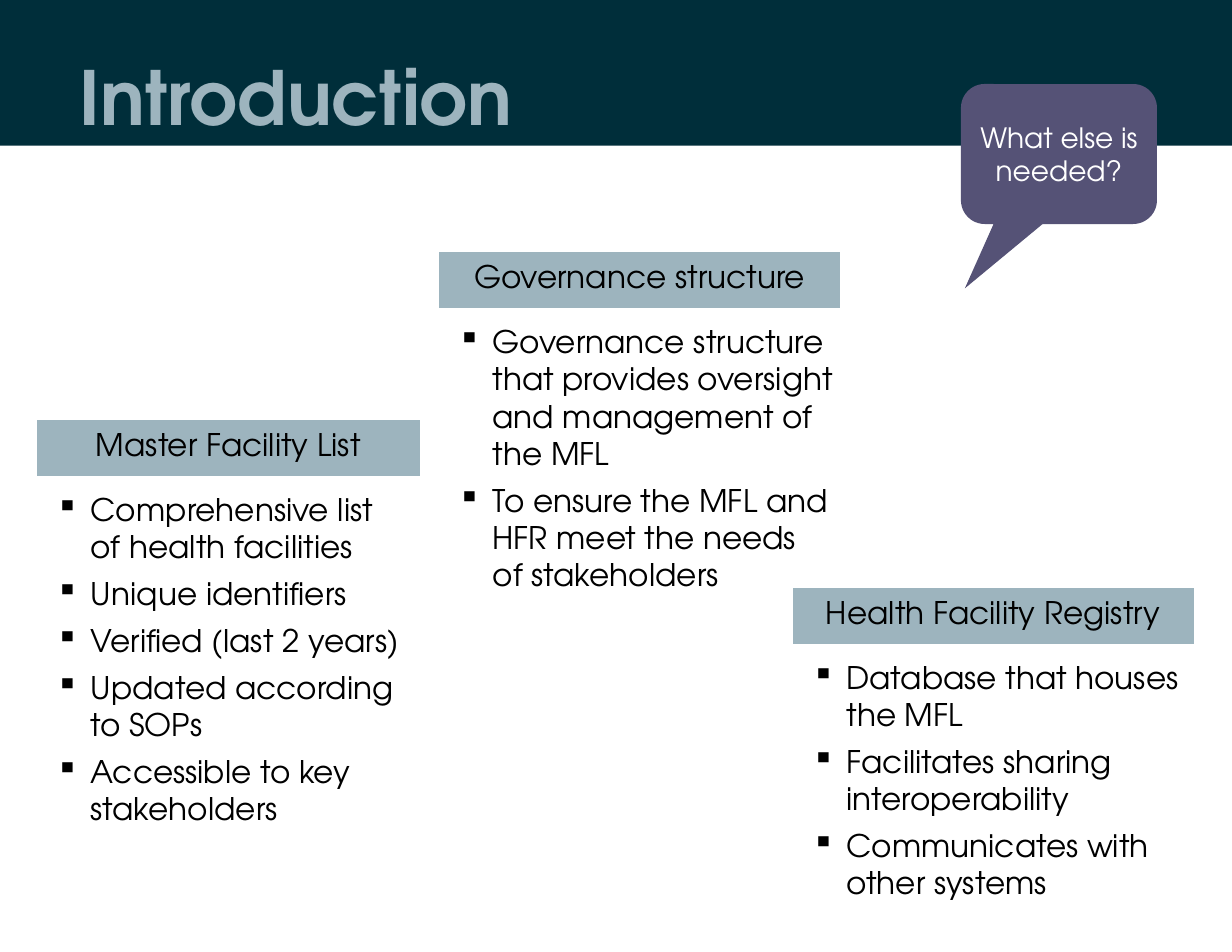
from dataclasses import dataclass

from lxml.etree import SubElement
from pptx import Presentation
from pptx.dml.color import RGBColor
from pptx.enum.shapes import MSO_SHAPE
from pptx.enum.text import MSO_ANCHOR, PP_ALIGN
from pptx.oxml.ns import qn
from pptx.util import Inches, Pt


@dataclass(frozen=True)
class Theme:
    font: str = "TeX Gyre Adventor"
    band: RGBColor = RGBColor(0x00, 0x2E, 0x3A)
    accent: RGBColor = RGBColor(0x9D, 0xB4, 0xBE)
    callout: RGBColor = RGBColor(0x55, 0x52, 0x76)
    dark: RGBColor = RGBColor(0x00, 0x00, 0x00)
    light: RGBColor = RGBColor(0xFF, 0xFF, 0xFF)
    title_size: Pt = Pt(48)
    body_size: Pt = Pt(20)
    callout_size: Pt = Pt(18)


theme = Theme()


def add_box(shapes, kind, left, top, width, height, fill=None):
    """Add a flat shape without outline or shadow; no fill means transparent."""
    shape = shapes.add_shape(kind, Inches(left), Inches(top), Inches(width), Inches(height))
    shape.shadow.inherit = False
    shape.line.fill.background()
    if fill is None:
        shape.fill.background()
    else:
        shape.fill.solid()
        shape.fill.fore_color.rgb = fill
    return shape


def write_text(shape, texts, color, size, anchor=MSO_ANCHOR.TOP, bold=False, **paragraph_format):
    """Fill a shape with one paragraph per text; a vertical tab breaks a line."""
    frame = shape.text_frame
    frame.word_wrap = True
    frame.vertical_anchor = anchor
    run_format = {"name": theme.font, "size": size, "bold": bold}
    for index, text in enumerate(texts):
        paragraph = frame.paragraphs[0] if index == 0 else frame.add_paragraph()
        paragraph.text = text
        for name, value in paragraph_format.items():
            setattr(paragraph, name, value)
        for run in paragraph.runs:
            for name, value in run_format.items():
                setattr(run.font, name, value)
            run.font.color.rgb = color


presentation = Presentation()
presentation.slide_width = Inches(11)
presentation.slide_height = Inches(8.5)
slide = presentation.slides.add_slide(presentation.slide_layouts[5])
shapes = slide.shapes

# Title on its band
title = shapes.title
title_place = {"left": 0.61, "top": 0.4, "width": 9.54, "height": 1.25}
for name, value in title_place.items():
    setattr(title, name, Inches(value))
write_text(title, ["Introduction"], theme.accent, theme.title_size,
           bold=True, alignment=PP_ALIGN.LEFT)

band = add_box(shapes, MSO_SHAPE.RECTANGLE, 0, 0, 11, 1.3, theme.band)
title.element.addprevious(band.element)

# Speech bubble
callout = add_box(shapes, MSO_SHAPE.ROUNDED_RECTANGULAR_CALLOUT,
                  8.58, 0.75, 1.75, 1.25, theme.callout)
for index, value in enumerate((-0.48, 0.96, 0.17)):
    callout.adjustments[index] = value
write_text(callout, ["What else is needed?"], theme.light, theme.callout_size,
           MSO_ANCHOR.MIDDLE, alignment=PP_ALIGN.CENTER)

# Topics: heading, left, top, heading width, list width, list height, items
topics = [
    ("Master Facility List", 0.33, 3.75, 3.42, 3.42, 3.08, [
        "Comprehensive list\vof health facilities",
        "Unique identifiers",
        "Verified (last 2 years)",
        "Updated according to SOPs",
        "Accessible to key stakeholders",
    ]),
    ("Governance structure", 3.92, 2.25, 3.58, 3.75, 2.83, [
        "Governance structure that provides oversight and management of the MFL",
        "To ensure the MFL and HFR meet the needs\vof stakeholders",
    ]),
    ("Health Facility Registry", 7.08, 5.25, 3.58, 3.58, 2.83, [
        "Database that houses the MFL",
        "Facilitates sharing interoperability",
        "Communicates with other systems",
    ]),
]
heading_height = 0.5
list_offset = 0.58
bullet_indent = {"marL": str(Inches(0.38)), "indent": str(Inches(-0.31))}

for heading, left, top, heading_width, list_width, list_height, items in topics:
    heading_box = add_box(shapes, MSO_SHAPE.FLOWCHART_PROCESS,
                          left, top, heading_width, heading_height, theme.accent)
    write_text(heading_box, [heading], theme.dark, theme.body_size,
               alignment=PP_ALIGN.CENTER)

    list_box = add_box(shapes, MSO_SHAPE.FLOWCHART_PROCESS,
                       left, top + list_offset, list_width, list_height)
    write_text(list_box, items, theme.dark, theme.body_size,
               alignment=PP_ALIGN.LEFT, space_before=Pt(6))
    for paragraph in list_box.text_frame.paragraphs:
        properties = paragraph._p.get_or_add_pPr()
        for name, value in bullet_indent.items():
            properties.set(name, value)
        SubElement(properties, qn("a:buChar")).set("char", "▪")

presentation.save("out.pptx")
